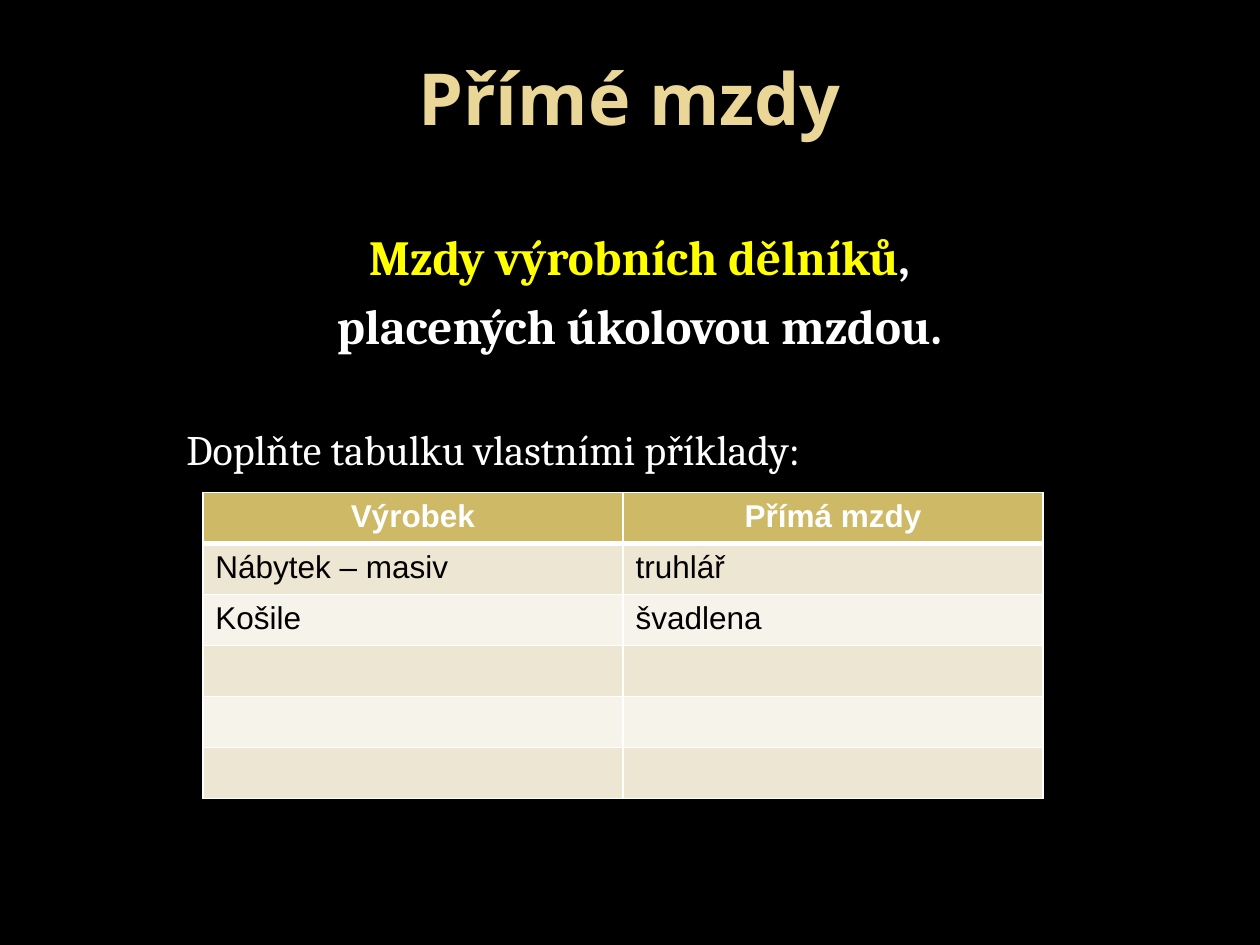
from dataclasses import dataclass

from lxml.etree import SubElement
from pptx import Presentation
from pptx.dml.color import RGBColor
from pptx.enum.text import MSO_ANCHOR, MSO_AUTO_SIZE, PP_ALIGN
from pptx.oxml.ns import qn
from pptx.util import Inches, Pt


@dataclass(frozen=True)
class Theme:
    background: str = "000000"
    title: str = "EAD696"
    accent: str = "FFFF00"
    light: str = "FFFFFF"
    dark: str = "000000"
    header: str = "CEB966"
    bands: tuple = ("EDE6D3", "F6F3EA")
    title_font: str = "Open Sans"
    body_font: str = "Cambria"
    table_font: str = "Arial"
    title_size: int = 41
    lead_size: int = 28
    task_size: int = 24
    table_size: int = 18


THEME = Theme()
TABLE_ROWS = [
    ("Výrobek", "Přímá mzdy"),
    ("Nábytek – masiv", "truhlář"),
    ("Košile", "švadlena"),
    ("", ""),
    ("", ""),
    ("", ""),
]


def rgb(value):
    return RGBColor.from_string(value)


def place(shape, left, top, width, height):
    """Position a shape, lengths in inches."""
    shape.left, shape.top = Inches(left), Inches(top)
    shape.width, shape.height = Inches(width), Inches(height)


def style(para, name, size, color, bold=False, align=PP_ALIGN.LEFT):
    para.alignment = align
    font = para.font
    font.name, font.size, font.bold = name, Pt(size), bold
    font.color.rgb = rgb(color)


def set_indent(para, left, first):
    """Indent a paragraph and switch its bullet off."""
    properties = para._p.get_or_add_pPr()
    properties.set("marL", str(Inches(left)))
    properties.set("indent", str(Inches(first)))
    properties.insert_element_before(
        properties.makeelement(qn("a:buNone"), {}),
        "a:tabLst", "a:defRPr", "a:extLst")


def add_title(page, text):
    title = page.shapes.title
    place(title, 0.5, 0.3, 9, 0.93)
    frame = title.text_frame
    frame.auto_size = MSO_AUTO_SIZE.NONE
    frame.vertical_anchor = MSO_ANCHOR.MIDDLE
    frame.text = text
    style(frame.paragraphs[0], THEME.title_font, THEME.title_size,
          THEME.title, True, PP_ALIGN.CENTER)


def add_body(page):
    body = page.placeholders[1]
    place(body, 0.5, 1.75, 9, 5.15)
    frame = body.text_frame
    frame.auto_size = MSO_AUTO_SIZE.NONE

    # Centred definition, with its subject in the accent colour
    first, second = frame.paragraphs[0], frame.add_paragraph()
    for para in (first, second):
        style(para, THEME.body_font, THEME.lead_size, THEME.light,
              True, PP_ALIGN.CENTER)
        set_indent(para, 0.6, -0.45)
    subject = first.add_run()
    subject.text = "Mzdy výrobních dělníků"
    subject.font.color.rgb = rgb(THEME.accent)
    first.add_run().text = ","
    second.add_run().text = "placených úkolovou mzdou."

    # Task that introduces the table
    task = frame.add_paragraph()
    task.text = "Doplňte tabulku vlastními příklady:"
    style(task, THEME.body_font, THEME.task_size, THEME.light)
    task.space_before = Pt(39.3)
    set_indent(task, 0.88, 0)


def set_border(cell, side, width):
    line = SubElement(cell._tc.get_or_add_tcPr(), qn(f"a:ln{side}"),
                      w=str(Pt(width)))
    fill = SubElement(line, qn("a:solidFill"))
    SubElement(fill, qn("a:srgbClr"), val=THEME.light)


def format_cell(cell, text, row):
    is_header = row == 0
    # The rule below the header is thicker than the grid
    widths = {"L": 1, "R": 1, "T": 3 if row == 1 else 1,
              "B": 3 if is_header else 1}
    for side, width in widths.items():
        set_border(cell, side, width)
    cell.fill.solid()
    cell.fill.fore_color.rgb = rgb(
        THEME.header if is_header else THEME.bands[(row - 1) % 2])
    cell.text = text
    style(cell.text_frame.paragraphs[0], THEME.table_font, THEME.table_size,
          THEME.light if is_header else THEME.dark, is_header,
          PP_ALIGN.CENTER if is_header else PP_ALIGN.LEFT)


def add_examples(page, rows):
    table = page.shapes.add_table(
        len(rows), len(rows[0]), Inches(1.61), Inches(3.91),
        Inches(6.67), Inches(2.43)).table
    for row, texts in enumerate(rows):
        for column, text in enumerate(texts):
            format_cell(table.cell(row, column), text, row)


def main():
    deck = Presentation()
    deck.slide_width, deck.slide_height = Inches(10), Inches(7.5)
    page = deck.slides.add_slide(deck.slide_layouts[1])
    page.background.fill.solid()
    page.background.fill.fore_color.rgb = rgb(THEME.background)
    add_title(page, "Přímé mzdy")
    add_body(page)
    add_examples(page, TABLE_ROWS)
    deck.save("out.pptx")


if __name__ == "__main__":
    main()
